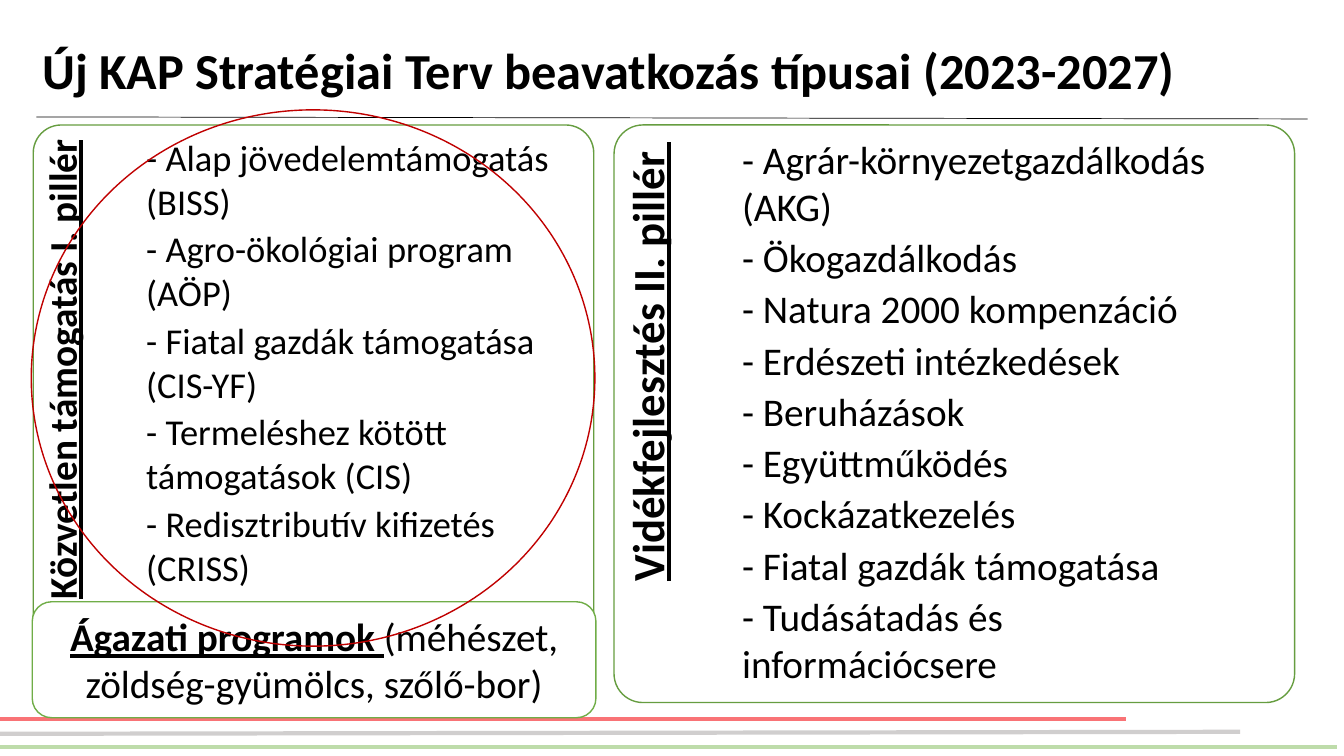
from dataclasses import dataclass

from lxml import etree
from pptx import Presentation
from pptx.dml.color import RGBColor
from pptx.enum import shapes, text
from pptx.oxml.ns import qn
from pptx.util import Emu, Pt

PX = 9144  # 100 px to the inch


@dataclass(frozen=True)
class Theme:
    font: str = "Calibri"
    ink: str = "000000"
    paper: str = "FFFFFF"
    red: str = "F97376"
    gray: str = "D0CECE"
    pale: str = "BEDCAA"
    frame: str = "669D40"
    green: str = "70AD47"
    ring: str = "C00000"
    title: int = 36
    large: int = 32
    body: int = 28
    small: int = 26


T = Theme()

DIRECT = [
    "- Alap jövedelemtámogatás (BISS)",
    "- Agro-ökológiai program (AÖP)",
    "- Fiatal gazdák támogatása (CIS-YF)",
    "- Termeléshez kötött támogatások (CIS)",
    "- Redisztributív kifizetés (CRISS)",
]
RURAL = [
    "- Agrár-környezetgazdálkodás (AKG)",
    "- Ökogazdálkodás",
    "- Natura 2000 kompenzáció",
    "- Erdészeti intézkedések",
    "- Beruházások",
    "- Együttműködés",
    "- Kockázatkezelés",
    "- Fiatal gazdák támogatása",
    "- Tudásátadás és információcsere",
]


def px(*nums):
    return [Emu(n * PX) for n in nums]


def style(font, size):
    font.name = T.font
    font.size = Pt(size)
    font.color.rgb = RGBColor.from_string(T.ink)


def rule(slide, start, end, color, width):
    line = slide.shapes.add_connector(
        shapes.MSO_CONNECTOR.STRAIGHT, *px(*start, *end))
    line.line.color.rgb = RGBColor.from_string(color)
    line.line.width = Pt(width)
    etree.SubElement(line._element.spPr, qn("a:effectLst"))


def outline(slide, kind, box, color, fill=None, adjust=None):
    shape = slide.shapes.add_shape(kind, *px(*box))
    shape.shadow.inherit = False
    if fill:
        shape.fill.solid()
        shape.fill.fore_color.rgb = RGBColor.from_string(fill)
    else:
        shape.fill.background()
    shape.line.color.rgb = RGBColor.from_string(color)
    shape.line.width = Pt(1)
    if adjust is not None:
        shape.adjustments[0] = adjust
    return shape


def write(slide, box, lines, size, insets=(0, 10, 0, 0)):
    """Add a wrapped text box; insets run left, top, right, bottom."""
    label = slide.shapes.add_textbox(*px(*box))
    frame = label.text_frame
    frame.word_wrap = True
    (frame.margin_left, frame.margin_top,
     frame.margin_right, frame.margin_bottom) = px(*insets)
    for i, line in enumerate(lines):
        para = frame.add_paragraph() if i else frame.paragraphs[0]
        para.text = line
        para.space_after = Pt(3)
        style(para.font, size)
    return label


def heading(slide, box, line, size, insets):
    label = write(slide, box, [line], size, insets)
    para = label.text_frame.paragraphs[0]
    para.line_spacing = 0.9
    para.font.bold = True
    return label


def pillar(slide, box, side, name, size, insets, column, items, points):
    """Draw a framed list with its name running up the left side."""
    outline(slide, shapes.MSO_SHAPE.ROUNDED_RECTANGLE, box,
            T.frame, T.paper, 0.05)
    label = heading(slide, side, name, size, insets)
    label.rotation = 270
    para = label.text_frame.paragraphs[0]
    para.alignment = text.PP_ALIGN.RIGHT
    para.font.underline = True
    write(slide, column, items, points)


def sector(slide):
    shape = outline(slide, shapes.MSO_SHAPE.ROUNDED_RECTANGLE,
                    (32, 597, 559, 115), T.green, T.paper)
    frame = shape.text_frame
    frame.word_wrap = True
    frame.vertical_anchor = text.MSO_ANCHOR.MIDDLE
    para = frame.paragraphs[0]
    para.alignment = text.PP_ALIGN.CENTER
    style(para.font, T.body)
    lead = para.add_run()
    lead.text = "Ágazati programok "
    lead.font.bold = lead.font.underline = True
    para.add_run().text = "(méhészet, zöldség-gyümölcs, szőlő-bor)"


def main():
    deck = Presentation()
    deck.slide_width, deck.slide_height = px(1333, 750)
    slide = deck.slides.add_slide(deck.slide_layouts[6])

    rule(slide, (0, 713), (1117, 713), T.red, 3)
    rule(slide, (0, 741), (1326, 741), T.pale, 3)
    rule(slide, (0, 728), (1230, 726), T.gray, 3)
    rule(slide, (36, 116), (1297, 118), T.ink, 0.5)

    title = heading(slide, (32, 0, 1276, 146),
                    "Új KAP Stratégiai Terv beavatkozás típusai (2023-2027)",
                    T.title, (10, 5, 10, 5))
    title.text_frame.vertical_anchor = text.MSO_ANCHOR.MIDDLE

    pillar(slide, (33, 124, 556, 573), (-147, 304, 470, 111),
           "Közvetlen támogatás I. pillér", T.body, (0, 10, 14, 0),
           (145, 124, 415, 573), DIRECT, T.small)
    pillar(slide, (609, 124, 675, 573), (441, 292, 470, 135),
           "Vidékfejlesztés II. pillér ", T.large, (0, 12, 16, 0),
           (736, 124, 503, 573), RURAL, T.body)
    sector(slide)
    outline(slide, shapes.MSO_SHAPE.OVAL, (31, 109, 559, 532), T.ring)

    deck.save("out.pptx")


if __name__ == "__main__":
    main()
